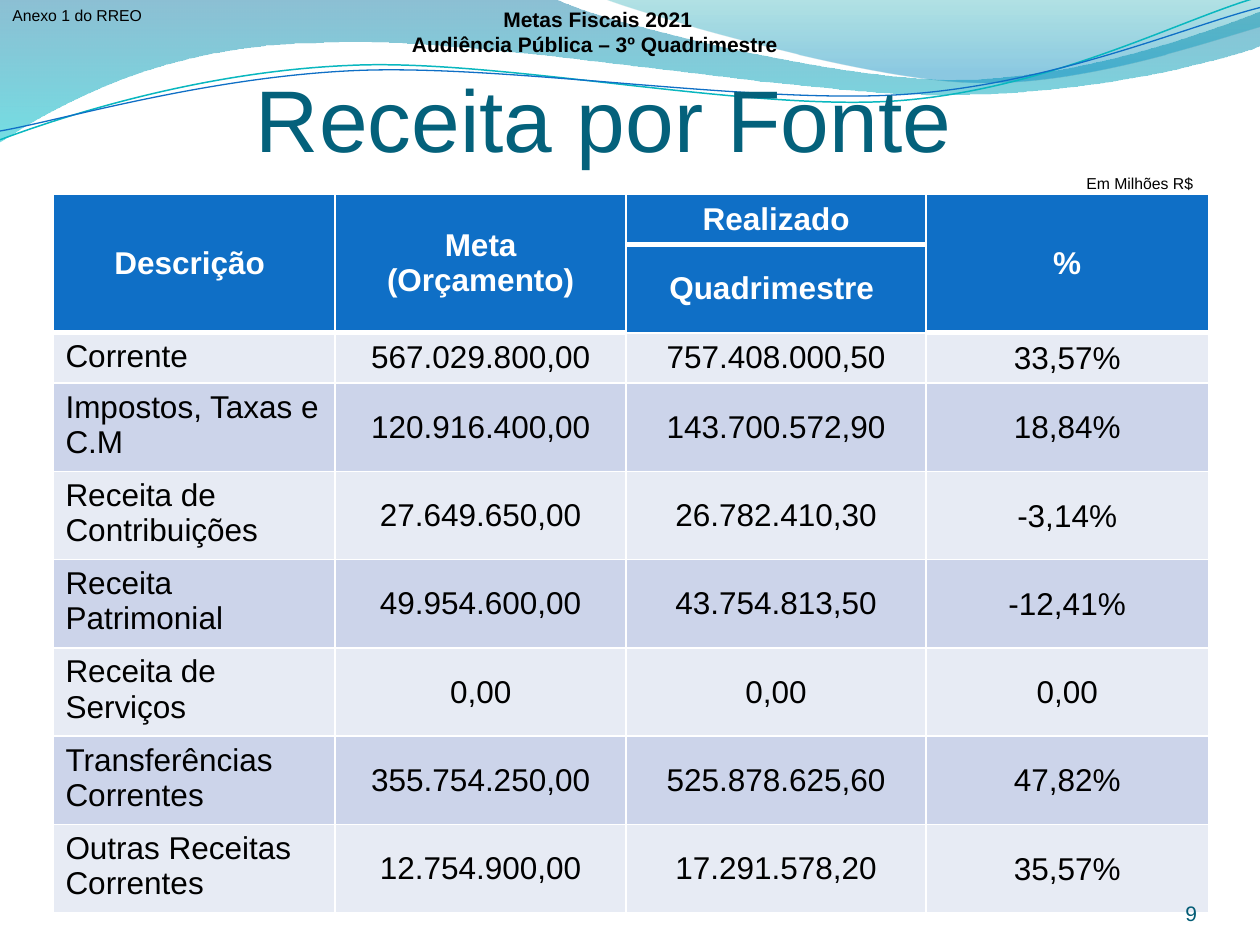
from dataclasses import dataclass

from lxml.etree import SubElement
from pptx import Presentation
from pptx.dml.color import RGBColor
from pptx.enum.text import MSO_ANCHOR, PP_ALIGN
from pptx.oxml.ns import qn
from pptx.util import Inches, Pt


@dataclass(frozen=True)
class Theme:
    font: str = "Arial"
    title: str = "04617B"
    number: str = "035C75"
    text: str = "000000"
    white: str = "FFFFFF"
    header: str = "0F6FC6"
    light_row: str = "E7EBF4"
    dark_row: str = "CCD4EA"
    teal_line: str = "09B7BF"
    blue_line: str = "0F6FC6"
    title_size: float = 50
    table_size: float = 18
    heading_size: float = 12
    label_size: float = 9
    thin: float = 0.96
    heavy: float = 3


THEME = Theme()
HEADER_ROWS = 2
SPLIT_COLUMN = 2
TABLE_HEIGHT = 5.66
COLUMN_WIDTHS = (2.24, 2.31, 2.38, 2.24)
ROW_HEIGHTS = (0.38, 0.66, 0.38) + (0.66,) * 6
ROWS = (
    ("Descrição ", "Meta (Orçamento)", "Realizado", "%"),
    ("", "", "Quadrimestre ", ""),
    ("Corrente", "567.029.800,00", "757.408.000,50", "33,57%"),
    ("Impostos, Taxas e C.M", "120.916.400,00", "143.700.572,90", "18,84%"),
    ("Receita de Contribuições", "27.649.650,00", "26.782.410,30", "-3,14%"),
    ("Receita Patrimonial", "49.954.600,00", "43.754.813,50", "-12,41%"),
    ("Receita de Serviços", "0,00", "0,00", "0,00"),
    ("Transferências Correntes", "355.754.250,00", "525.878.625,60", "47,82%"),
    ("Outras Receitas Correntes", "12.754.900,00", "17.291.578,20", "35,57%"),
)


def color(value):
    return RGBColor.from_string(value)


def write(para, text, size, ink, bold=False, align=PP_ALIGN.LEFT):
    para.alignment = align
    span = para.add_run()
    span.text = text
    span.font.name = THEME.font
    span.font.size = Pt(size)
    span.font.bold = bold
    span.font.color.rgb = color(ink)


def add_text(page, place, lines, size, ink, bold=False, align=PP_ALIGN.CENTER,
             anchor=MSO_ANCHOR.TOP, side=0.1, edge=0.05):
    box = page.shapes.add_textbox(*map(Inches, place))
    frame = box.text_frame
    frame.word_wrap = True
    frame.vertical_anchor = anchor
    frame.margin_left = frame.margin_right = Inches(side)
    frame.margin_top = frame.margin_bottom = Inches(edge)
    for index, line in enumerate(lines):
        para = frame.add_paragraph() if index else frame.paragraphs[0]
        write(para, line, size, ink, bold, align)


def bend(shape, segments):
    outline = next(shape.element.spPr.iter(qn("a:path")))
    corners = iter(outline.findall(qn("a:lnTo")))
    for segment in segments:
        first = next(corners)
        if len(segment) == 6:
            first.tag = qn("a:cubicBezTo")
            for corner in (next(corners), next(corners)):
                first.append(corner[0])
                outline.remove(corner)


def add_outline(page, start, segments, close):
    points = [(Inches(x), Inches(y))
              for segment in segments
              for x, y in zip(segment[::2], segment[1::2])]
    builder = page.shapes.build_freeform(*map(Inches, start))
    builder.add_line_segments(points, close=close)
    shape = builder.convert_to_shape()
    bend(shape, segments)
    shape.shadow.inherit = False
    return shape


def add_wave(page, start, segments, stops, angle):
    wave = add_outline(page, start, segments, True)
    wave.line.fill.background()
    wave.fill.gradient()
    wave.fill.gradient_angle = angle
    for stop, (position, tint, opacity) in zip(wave.fill.gradient_stops, stops):
        stop.position = position
        stop.color.rgb = color(tint)
    tints = wave.element.spPr.find(qn("a:gradFill")).iter(qn("a:srgbClr"))
    for tint, (position, name, opacity) in zip(tints, stops):
        SubElement(tint, qn("a:alpha")).set("val", str(opacity * 1000))


def add_curve(page, start, segments, ink, width):
    curve = add_outline(page, start, segments, False)
    curve.fill.background()
    curve.line.color.rgb = color(ink)
    curve.line.width = Pt(width)


def set_borders(cell, widths):
    properties = cell._tc.get_or_add_tcPr()
    for side, width in zip("LRTB", widths):
        line = SubElement(properties, qn(f"a:ln{side}"), w=str(Pt(width)))
        fill = SubElement(line, qn("a:solidFill"))
        SubElement(fill, qn("a:srgbClr"), val=THEME.white)


def style_cell(cell, row, column, text):
    is_header = row < HEADER_ROWS
    merged = column != SPLIT_COLUMN
    top = THEME.heavy if row == 1 or (row == 2 and merged) else THEME.thin
    bottom = THEME.heavy if row == 0 or (row == 1 and merged) else THEME.thin
    set_borders(cell, (THEME.thin, THEME.thin, top, bottom))
    stripe = THEME.dark_row if row % 2 else THEME.light_row
    cell.fill.solid()
    cell.fill.fore_color.rgb = color(THEME.header if is_header else stripe)
    is_label = column == 0 and not is_header
    cell.vertical_anchor = MSO_ANCHOR.TOP if is_label else MSO_ANCHOR.MIDDLE
    if column == 3 and not is_header:
        cell.margin_left = cell.margin_right = cell.margin_top = Inches(0.01)
        cell.margin_bottom = 0
    if text:
        write(cell.text_frame.paragraphs[0], text, THEME.table_size,
              THEME.white if is_header else THEME.text, is_header,
              PP_ALIGN.LEFT if is_label else PP_ALIGN.CENTER)


def add_revenue_table(page):
    holder = page.shapes.add_table(
        len(ROWS), len(COLUMN_WIDTHS), Inches(0.42), Inches(1.54),
        Inches(sum(COLUMN_WIDTHS)), Inches(TABLE_HEIGHT))
    table = holder.table
    table.horz_banding = False
    for column, width in zip(table.columns, COLUMN_WIDTHS):
        column.width = Inches(width)
    for row, height in zip(table.rows, ROW_HEIGHTS):
        row.height = Inches(height)
    holder.height = Inches(TABLE_HEIGHT)
    for row, texts in enumerate(ROWS):
        for column, text in enumerate(texts):
            style_cell(table.cell(row, column), row, column, text)
    for column in range(len(COLUMN_WIDTHS)):
        if column != SPLIT_COLUMN:
            table.cell(0, column).merge(table.cell(1, column))


def add_background(page):
    add_wave(page, (0, 0), [
        (4.4, -0.01), (4.76, 0.17, 6.64, 0.63, 7.58, 0.63),
        (8.53, 0.63, 9.58, 0.26, 10, 0.09), (10.01, 0.36),
        (9.83, 0.44, 8.7, 0.76, 7.46, 0.75), (6.22, 0.75, 3.82, 0.28, 2.57, 0.34),
        (1.29, 0.35, 0.46, 0.83, -0.01, 1.13),
    ], ((0, "0074A0", 45), (1, "00C4CD", 55)), 270)
    add_wave(page, (4.79, -0.01), [
        (5.09, 0.11, 6.82, 0.62, 7.69, 0.65), (8.56, 0.69, 9.61, 0.32, 10, 0.21),
        (10, 0),
    ], ((0.2, "008ABF", 45), (1, "00A0A8", 30)), 90)
    add_curve(page, (0, 1.11), [
        (0.48, 0.93, 1.58, 0.57, 2.77, 0.52), (3.95, 0.46, 5.93, 0.89, 7.13, 0.8),
        (8.33, 0.71, 9.38, 0.15, 9.98, -0.02),
    ], THEME.teal_line, 0.85)
    add_curve(page, (0, 1.04), [
        (0.47, 0.96, 1.64, 0.61, 2.83, 0.56), (4.03, 0.51, 5.97, 0.83, 7.17, 0.75),
        (8.36, 0.67, 9.41, 0.21, 10, 0.06),
    ], THEME.blue_line, 0.75)


def main():
    deck = Presentation()
    deck.slide_width, deck.slide_height = Inches(10), Inches(7.5)
    page = deck.slides.add_slide(deck.slide_layouts[6])
    add_background(page)
    add_text(page, (0.39, 0.48, 9, 1.03), ["Receita por Fonte "],
             THEME.title_size, THEME.title, side=0, edge=0.04)
    add_revenue_table(page)
    add_text(page, (8.67, 6.95, 0.83, 0.4), ["9"], THEME.heading_size, THEME.number,
             align=PP_ALIGN.RIGHT, anchor=MSO_ANCHOR.BOTTOM, side=0, edge=0)
    add_text(page, (8.52, 1.33, 1.05, 0.25), ["Em Milhões R$"],
             THEME.label_size, THEME.text, side=0.05)
    add_text(page, (0, 0, 1.36, 0.25), ["Anexo 1 do RREO"],
             THEME.label_size, THEME.text, align=PP_ALIGN.LEFT)
    add_text(page, (3.05, 0, 3.39, 0.5),
             ["Metas Fiscais 2021", "Audiência Pública – 3º Quadrimestre "],
             THEME.heading_size, THEME.text, bold=True, anchor=MSO_ANCHOR.MIDDLE)
    deck.save("out.pptx")


if __name__ == "__main__":
    main()
